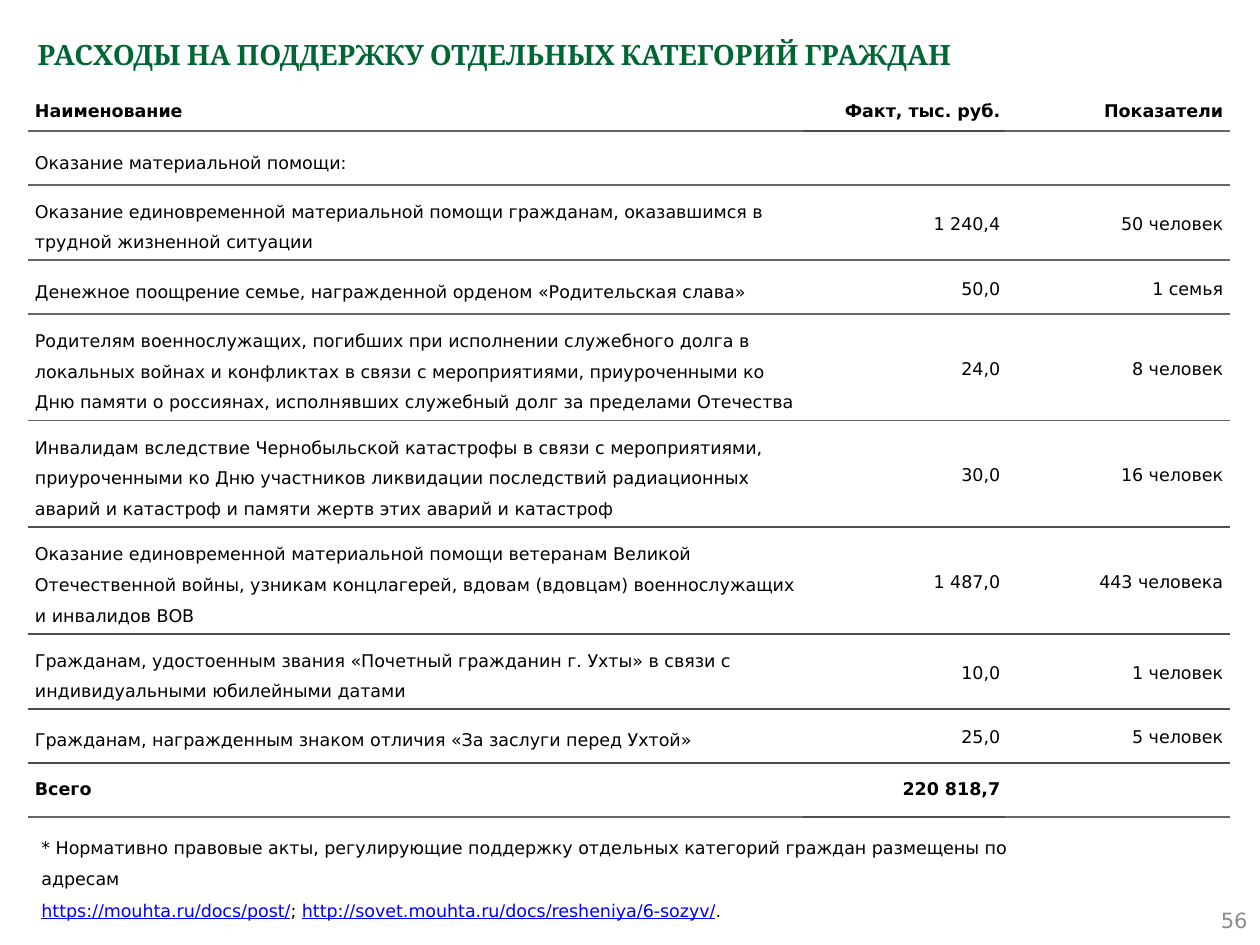
from dataclasses import dataclass
from typing import NamedTuple

from lxml.etree import SubElement
from pptx import Presentation
from pptx.dml.color import RGBColor
from pptx.enum.text import MSO_ANCHOR as Anchor, PP_ALIGN as Align
from pptx.oxml.ns import qn
from pptx.util import Emu, Pt

PX_PER_INCH = 126


def px(length: int) -> Emu:
    return Emu(round(length * 914400 / PX_PER_INCH))


@dataclass(frozen=True)
class Theme:
    heading_font: str = "Cambria"
    body_font: str = "DejaVu Sans"
    heading_size: int = 16
    body_size: int = 10
    page_size: int = 12
    green: str = "006633"
    black: str = "000000"
    gray: str = "8C8C8C"
    link: str = "0000FF"
    white: str = "FFFFFF"
    rule: str = "666666"
    dark_rule: str = "4D4D4D"


class Box(NamedTuple):
    left: int
    top: int
    width: int
    height: int

    def emu(self) -> list[Emu]:
        return [px(side) for side in self]


class Expense(NamedTuple):
    purpose: str
    amount: str = ""
    recipients: str = ""
    bold: bool = False
    name_spacing: float = 1.5
    value_spacing: float = 1.2
    anchor: Anchor = Anchor.MIDDLE


class Span(NamedTuple):
    text: str
    linked: bool = False


THEME = Theme()
TITLE_BOX = Box(25, 25, 1211, 100)
TABLE_BOX = Box(29, 95, 1200, 724)
NOTE_BOX = Box(29, 820, 1065, 72)
PAGE_BOX = Box(966, 895, 294, 50)
COLUMN_WIDTHS = (775, 202, 223)
HEADER_HEIGHT, ROW_HEIGHT = 36, 54
CELL_INSET = px(6)
FIRST_DARK_EDGE = 6
AMOUNT_COLUMN = 1

EXPENSES = [
    Expense("Наименование", "Факт, тыс. руб.", "Показатели", True, 1.0, 1.0, Anchor.TOP),
    Expense("Оказание материальной помощи:"),
    Expense("Оказание единовременной материальной помощи гражданам, оказавшимся в "
            "трудной жизненной ситуации", "1 240,4", "50 человек"),
    Expense("Денежное поощрение семье, награжденной орденом «Родительская слава»",
            "50,0", "1 семья"),
    Expense("Родителям военнослужащих, погибших при исполнении служебного долга в "
            "локальных войнах и конфликтах в связи с мероприятиями, приуроченными ко "
            "Дню памяти о россиянах, исполнявших служебный долг за пределами Отечества",
            "24,0", "8 человек"),
    Expense("Инвалидам вследствие Чернобыльской катастрофы в связи с мероприятиями, "
            "приуроченными ко Дню участников ликвидации последствий радиационных "
            "аварий и катастроф и памяти жертв этих аварий и катастроф",
            "30,0", "16 человек"),
    Expense("Оказание единовременной материальной помощи ветеранам Великой "
            "Отечественной войны, узникам концлагерей, вдовам (вдовцам) военнослужащих "
            "и инвалидов ВОВ", "1 487,0", "443 человека"),
    Expense("Гражданам, удостоенным звания «Почетный гражданин г. Ухты» в связи с "
            "индивидуальными юбилейными датами", "10,0", "1 человек"),
    Expense("Гражданам, награжденным знаком отличия «За заслуги перед Ухтой»",
            "25,0", "5 человек"),
    Expense("Всего", "220 818,7", "", True, 1.0, 1.0),
]
NOTE = [
    [Span("* Нормативно правовые акты, регулирующие поддержку отдельных категорий "
          "граждан размещены по адресам")],
    [Span("https://mouhta.ru/docs/post/", True), Span("; "),
     Span("http://sovet.mouhta.ru/docs/resheniya/6-sozyv/", True), Span(".")],
]


def set_font(font, color: str, size: int = THEME.body_size,
             name: str = THEME.body_font, bold: bool = False) -> None:
    font.name, font.size, font.bold = name, Pt(size), bold
    font.color.rgb = RGBColor.from_string(color)


def edge_color(edge: int, column: int) -> str:
    if edge == 0:
        return THEME.white
    if edge in (1, len(EXPENSES)):
        return THEME.dark_rule if column == AMOUNT_COLUMN else THEME.rule
    return THEME.dark_rule if edge >= FIRST_DARK_EDGE else THEME.rule


def set_borders(cell, top: str, bottom: str) -> None:
    properties = cell._tc.get_or_add_tcPr()
    sides = {"a:lnL": THEME.white, "a:lnR": THEME.white, "a:lnT": top, "a:lnB": bottom}
    for tag, color in sides.items():
        line = SubElement(properties, qn(tag), w=str(Pt(1)))
        SubElement(SubElement(line, qn("a:solidFill")), qn("a:srgbClr"), val=color)


def fill_cell(cell, text: str, expense: Expense, row: int, column: int) -> None:
    cell.margin_left = cell.margin_right = CELL_INSET
    cell.margin_top = cell.margin_bottom = CELL_INSET
    cell.vertical_anchor = expense.anchor
    cell.text = text
    paragraph = cell.text_frame.paragraphs[0]
    paragraph.alignment = Align.RIGHT if column else Align.LEFT
    paragraph.line_spacing = expense.value_spacing if column else expense.name_spacing
    set_font(paragraph.font, THEME.black, bold=expense.bold)
    set_borders(cell, edge_color(row, column), edge_color(row + 1, column))
    cell.fill.background()


def add_expenses(slide) -> None:
    frame = slide.shapes.add_table(len(EXPENSES), len(COLUMN_WIDTHS), *TABLE_BOX.emu())
    table = frame.table
    table.first_row = table.horz_banding = False
    for column, width in zip(table.columns, COLUMN_WIDTHS):
        column.width = px(width)
    for row, expense in enumerate(EXPENSES):
        table.rows[row].height = px(ROW_HEIGHT if row else HEADER_HEIGHT)
        for column, text in enumerate(expense[:len(COLUMN_WIDTHS)]):
            fill_cell(table.cell(row, column), text, expense, row, column)


def add_title(slide) -> None:
    title = slide.shapes.title
    title.left, title.top, title.width, title.height = TITLE_BOX.emu()
    title.text_frame.text = "РАСХОДЫ НА ПОДДЕРЖКУ ОТДЕЛЬНЫХ КАТЕГОРИЙ ГРАЖДАН"
    title.text_frame.vertical_anchor = Anchor.TOP
    heading = title.text_frame.paragraphs[0]
    heading.alignment, heading.line_spacing = Align.LEFT, 1.2
    set_font(heading.font, THEME.green, THEME.heading_size, THEME.heading_font, True)


def add_note(slide) -> None:
    note = slide.shapes.add_textbox(*NOTE_BOX.emu()).text_frame
    note.word_wrap = True
    for index, spans in enumerate(NOTE):
        paragraph = note.add_paragraph() if index else note.paragraphs[0]
        paragraph.line_spacing = 1.5
        set_font(paragraph.font, THEME.black)
        for span in spans:
            run = paragraph.add_run()
            run.text = span.text
            if span.linked:
                run.font.underline = True
                run.font.color.rgb = RGBColor.from_string(THEME.link)


def add_page_number(slide) -> None:
    page = slide.shapes.add_textbox(*PAGE_BOX.emu()).text_frame
    page.word_wrap = True
    page.vertical_anchor = Anchor.MIDDLE
    page.text = "56"
    page.paragraphs[0].alignment = Align.RIGHT
    set_font(page.paragraphs[0].font, THEME.gray, THEME.page_size)


def main() -> None:
    deck = Presentation()
    deck.slide_width, deck.slide_height = px(1260), px(945)
    slide = deck.slides.add_slide(deck.slide_layouts[5])
    add_title(slide)
    add_page_number(slide)
    add_expenses(slide)
    add_note(slide)
    deck.save("out.pptx")


if __name__ == "__main__":
    main()
